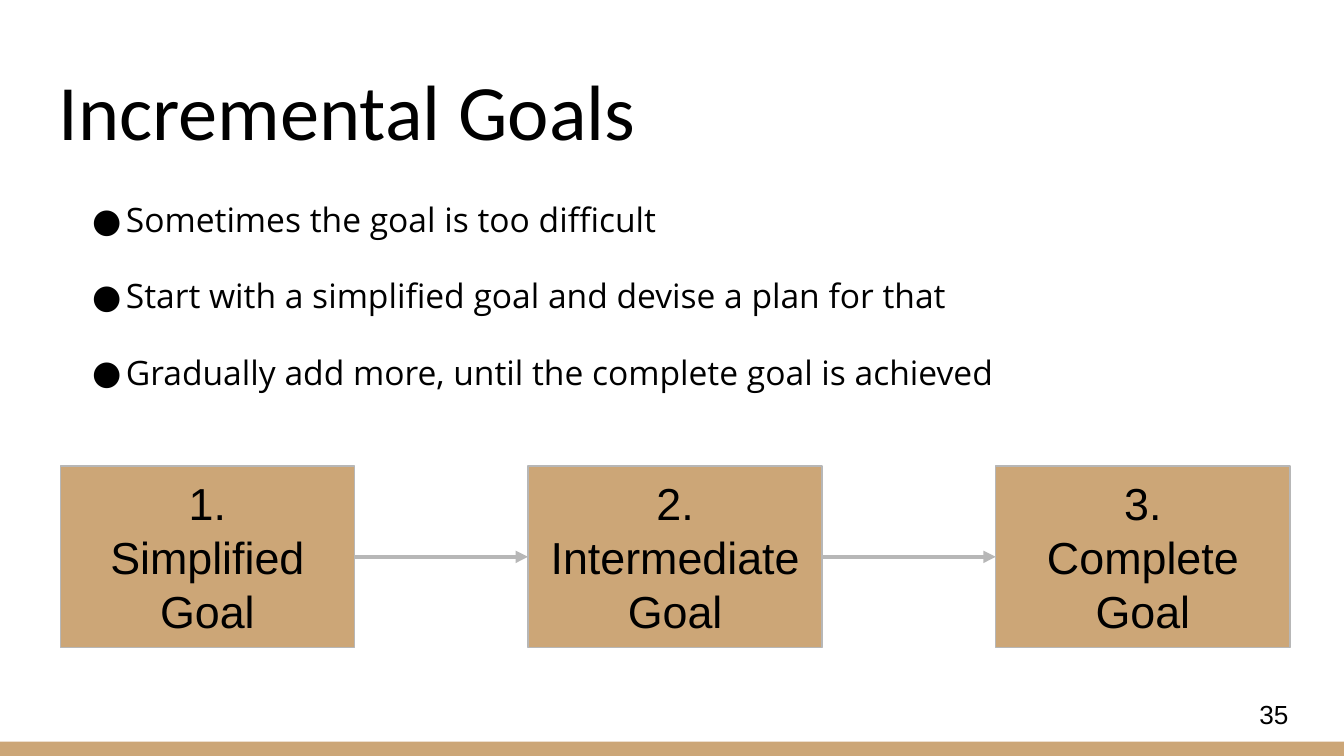
from lxml import etree
from pptx import Presentation
from pptx.dml.color import RGBColor
from pptx.enum.shapes import MSO_CONNECTOR, MSO_SHAPE
from pptx.enum.text import MSO_ANCHOR, PP_ALIGN
from pptx.oxml.ns import qn
from pptx.util import Cm, Pt

RECT = MSO_SHAPE.RECTANGLE
LINE = MSO_CONNECTOR.STRAIGHT
TOP, MID, LOW = MSO_ANCHOR.TOP, MSO_ANCHOR.MIDDLE, MSO_ANCHOR.BOTTOM
LEFT, CENTER = PP_ALIGN.LEFT, PP_ALIGN.CENTER

TAN = RGBColor(0xCC, 0xA6, 0x77)
GRAY = RGBColor(0xB7, 0xB7, 0xB7)
BLACK = RGBColor(0, 0, 0)

PAD = Cm(0.25)
FRAME = {"word_wrap": True, "margin_left": PAD, "margin_right": PAD,
         "margin_top": PAD, "margin_bottom": PAD}
HEAD = {"name": "Calibri", "size": Pt(42)}
BODY = {"name": "Open Sans", "size": Pt(18)}
GOAL = {"name": "Arial", "size": Pt(24)}
PAGE = {"name": "Arial", "size": Pt(14)}
SPACE = {"line_spacing": 1.15, "space_after": Pt(16)}


def apply(item, form):
    for key, value in form.items():
        setattr(item, key, value)


def write(shape, lines, font, anchor=TOP, align=LEFT):
    frame = shape.text_frame
    apply(frame, {**FRAME, "vertical_anchor": anchor})
    frame.text = "\n".join(lines)
    for para in frame.paragraphs:
        para.alignment = align
        run = para.runs[0]
        apply(run.font, font)
        run.font.color.rgb = BLACK
    return frame.paragraphs


def add_text(slide, box, lines, font, anchor=TOP):
    shape = slide.shapes.add_textbox(*map(Cm, box))
    return write(shape, lines, font, anchor)


def add_rect(slide, box):
    shape = slide.shapes.add_shape(RECT, *map(Cm, box))
    shape.shadow.inherit = False
    shape.fill.solid()
    shape.fill.fore_color.rgb = TAN
    shape.line.fill.background()
    return shape


def add_list(slide, box, lines):
    for para in add_text(slide, box, lines, BODY):
        apply(para, SPACE)
        props = para._p.get_or_add_pPr()
        props.set("marL", str(Cm(1.27)))
        props.set("indent", str(-Cm(0.64)))
        color = etree.SubElement(props, qn("a:buClr"))
        etree.SubElement(color, qn("a:srgbClr"), val=str(BLACK))
        etree.SubElement(props, qn("a:buFont"), typeface=BODY["name"])
        etree.SubElement(props, qn("a:buChar"), char="●")


def add_arrow(slide, start, end):
    arrow = slide.shapes.add_connector(LINE, 0, 0, 0, 0)
    arrow.begin_connect(start, 3)
    arrow.end_connect(end, 1)
    arrow.line.color.rgb = GRAY
    arrow.line.width = Pt(2.25)
    etree.SubElement(arrow.line._get_or_add_ln(), qn("a:tailEnd"), type="triangle")
    etree.SubElement(arrow._element.spPr, qn("a:effectLst"))


def add_flow(slide, box, names):
    left, top, width, height = box
    wide = 5.56
    step = (width - wide) / (len(names) - 1)
    cards = []
    for i, name in enumerate(names):
        card = add_rect(slide, (left + i * step, top, wide, height))
        card.line.color.rgb = GRAY
        card.line.width = Pt(0.75)
        write(card, [f"{i + 1}.", name, "Goal"], GOAL, MID, CENTER)
        cards.append(card)
    for start, end in zip(cards, cards[1:]):
        add_arrow(slide, start, end)


def main():
    deck = Presentation()
    apply(deck, {"slide_width": Cm(25.4), "slide_height": Cm(14.29)})
    slide = deck.slides.add_slide(deck.slide_layouts[6])
    add_rect(slide, (0, 14.02, 25.4, 0.27))
    add_text(slide, (0.86, 0.89, 23.67, 2.31), ["Incremental Goals"], HEAD, LOW)
    add_list(slide, (0.86, 3.4, 23.67, 9.32), [
        "Sometimes the goal is too difficult",
        "Start with a simplified goal and devise a plan for that",
        "Gradually add more, until the complete goal is achieved",
    ])
    add_flow(slide, (1.14, 8.81, 23.24, 3.43),
             ["Simplified", "Intermediate", "Complete"])
    add_text(slide, (23.55, 12.95, 1.52, 1.09), ["35"], PAGE, MID)
    deck.save("out.pptx")


if __name__ == "__main__":
    main()
